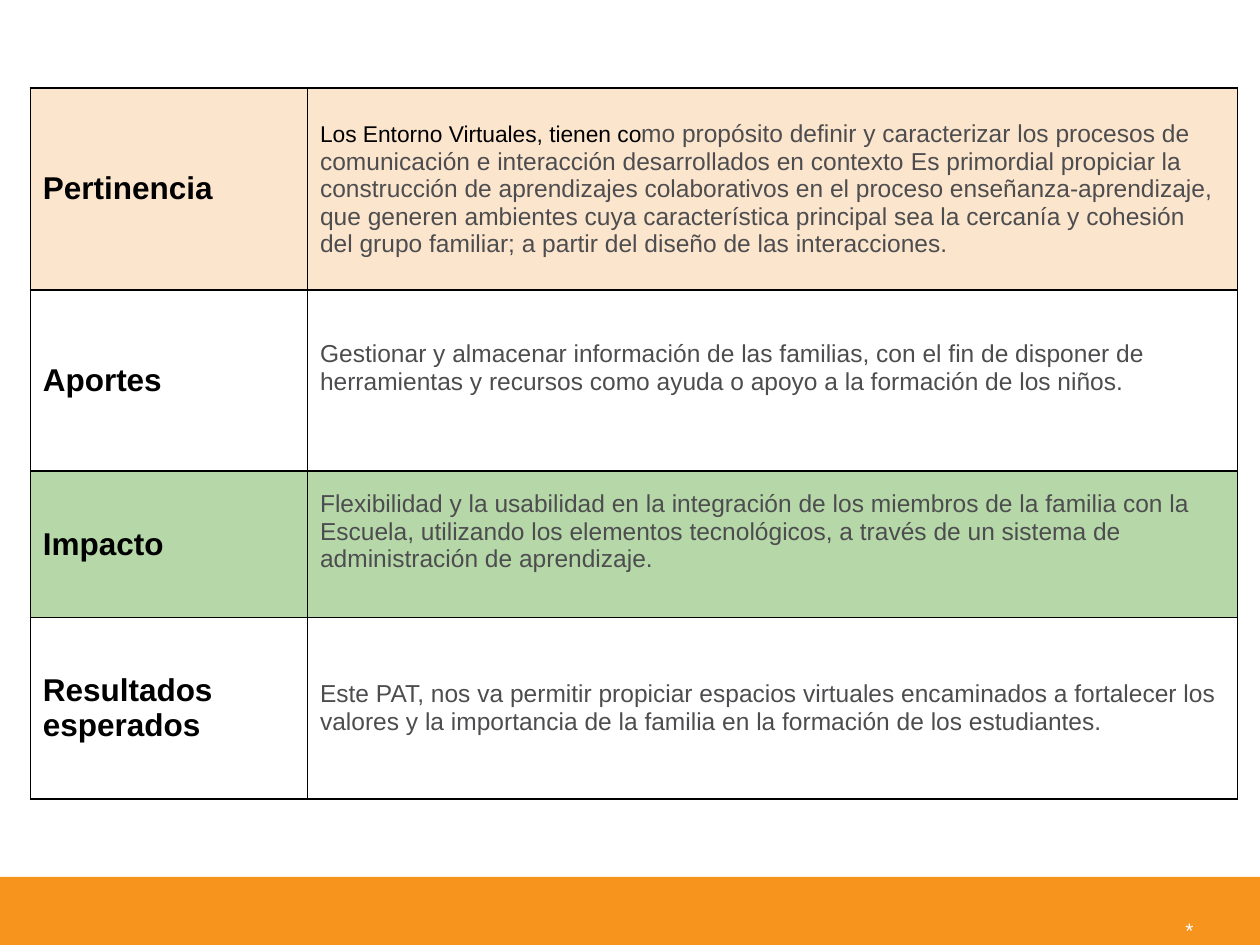
from lxml.etree import SubElement
from pptx import Presentation
from pptx.dml.color import RGBColor
from pptx.enum.shapes import MSO_SHAPE
from pptx.enum.text import MSO_ANCHOR, PP_ALIGN
from pptx.oxml.ns import qn
from pptx.util import Inches, Pt

FONT = "Arial"
BLACK = RGBColor(0x00, 0x00, 0x00)
GRAY = RGBColor(0x4D, 0x4D, 0x4F)
WHITE = RGBColor(0xFF, 0xFF, 0xFF)
ORANGE = RGBColor(0xF7, 0x94, 0x1D)
PEACH = RGBColor(0xFC, 0xE5, 0xCD)
GREEN = RGBColor(0xB6, 0xD7, 0xA8)

LABEL = (18, BLACK, True)
LEAD = (13, BLACK, False)
BODY = (14, GRAY, False)

COLUMN_WIDTHS = (2.2, 7.38)
MARGIN = 0.1
# Each row: height, fill, bottom margin of the description, label, description runs
ROWS = [
    (1.6, PEACH, MARGIN, "Pertinencia", [
        ("Los Entorno Virtuales, tienen co", LEAD),
        ("mo propósito definir y caracterizar los procesos de comunicación e "
         "interacción desarrollados en contexto", BODY),
        (" ", LEAD),
        ("Es primordial propiciar la construcción de aprendizajes colaborativos "
         "en el proceso enseñanza-aprendizaje, que generen ambientes cuya "
         "característica principal sea la cercanía y cohesión del grupo familiar; "
         "a partir del diseño de las interacciones.", BODY)]),
    (1.44, None, 0.3, "Aportes", [
        ("Gestionar y almacenar información de las familias, con el fin de "
         "disponer de herramientas y recursos como ayuda o apoyo a la formación "
         "de los niños.", BODY)]),
    (1.16, GREEN, 0.3, "Impacto", [
        ("Flexibilidad y la usabilidad en la integración de los miembros de la "
         "familia con la Escuela, utilizando los elementos tecnológicos, a través "
         "de un sistema de administración de aprendizaje.", BODY)]),
    (1.44, None, MARGIN, "Resultados esperados", [
        ("Este PAT, nos va permitir propiciar espacios virtuales encaminados a "
         "fortalecer los valores y la importancia de la familia en la formación "
         "de los estudiantes.", BODY)]),
]


def add_run(paragraph, text, style):
    run = paragraph.add_run()
    run.text = text
    size, color, run.font.bold = style
    run.font.size = Pt(size)
    run.font.name = FONT
    run.font.color.rgb = color


def add_borders(cell):
    properties = cell._tc.get_or_add_tcPr()
    for position, side in enumerate(("lnL", "lnR", "lnT", "lnB")):
        line = properties.makeelement(qn(f"a:{side}"), {"w": str(Pt(1))})
        fill = SubElement(line, qn("a:solidFill"))
        SubElement(fill, qn("a:srgbClr"), val=str(BLACK))
        properties.insert(position, line)


def fill_cell(cell, runs, fill, bottom):
    cell.vertical_anchor = MSO_ANCHOR.MIDDLE
    cell.margin_left = cell.margin_right = cell.margin_top = Inches(MARGIN)
    cell.margin_bottom = Inches(bottom)
    if fill is None:
        cell.fill.background()
    else:
        cell.fill.solid()
        cell.fill.fore_color.rgb = fill
    for text, style in runs:
        add_run(cell.text_frame.paragraphs[0], text, style)
    add_borders(cell)


def add_footer(slide):
    band = slide.shapes.add_shape(MSO_SHAPE.RECTANGLE, 0, Inches(6.96),
                                  Inches(10), Inches(0.56))
    band.shadow.inherit = False
    band.fill.solid()
    band.fill.fore_color.rgb = ORANGE
    band.line.fill.background()

    number = slide.shapes.add_textbox(Inches(8.91), Inches(7.28),
                                      Inches(1.06), Inches(0.21))
    frame = number.text_frame
    frame.word_wrap = True
    frame.vertical_anchor = MSO_ANCHOR.MIDDLE
    frame.paragraphs[0].alignment = PP_ALIGN.CENTER
    add_run(frame.paragraphs[0], "*", (12, WHITE, False))


def add_summary_table(slide):
    table = slide.shapes.add_table(
        len(ROWS), len(COLUMN_WIDTHS), Inches(0.24), Inches(0.7),
        Inches(sum(COLUMN_WIDTHS)), Inches(sum(row[0] for row in ROWS))).table
    table.first_row = table.horz_banding = False
    for column, width in zip(table.columns, COLUMN_WIDTHS):
        column.width = Inches(width)
    for index, (height, fill, bottom, label, description) in enumerate(ROWS):
        table.rows[index].height = Inches(height)
        fill_cell(table.cell(index, 0), [(label, LABEL)], fill, MARGIN)
        fill_cell(table.cell(index, 1), description, fill, bottom)


def main():
    presentation = Presentation()
    presentation.slide_width, presentation.slide_height = Inches(10), Inches(7.5)
    slide = presentation.slides.add_slide(presentation.slide_layouts[6])
    add_footer(slide)
    add_summary_table(slide)
    presentation.save("out.pptx")


if __name__ == "__main__":
    main()
